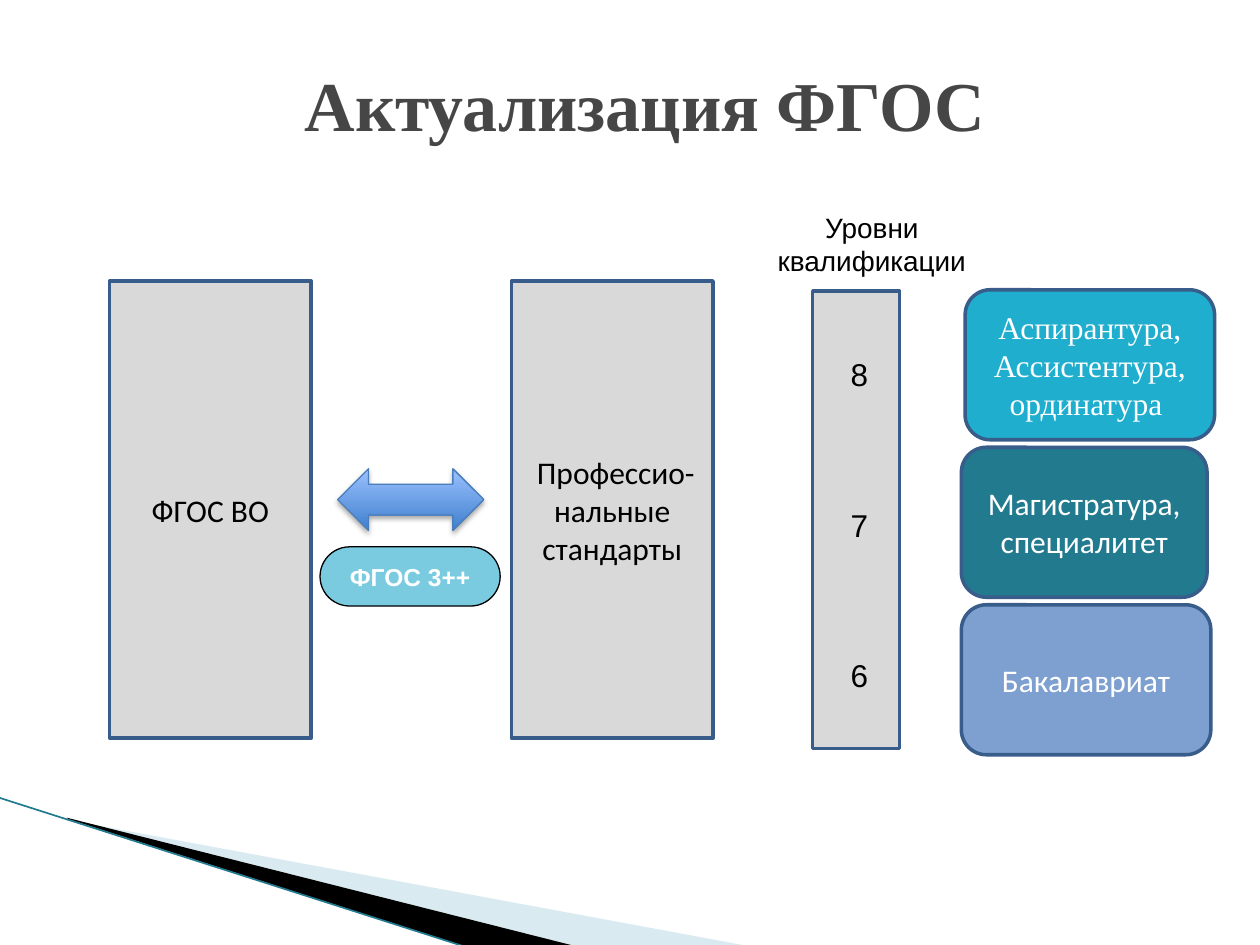
import pptx
import pptx.chart.data
import pptx.dml.color
import pptx.enum.shapes
import pptx.enum.text
import pptx.oxml
import pptx.oxml.ns
import pptx.util
from pptx.util import Inches

SHAPES = pptx.enum.shapes.MSO_SHAPE
ALIGN = pptx.enum.text.PP_ALIGN
WIDE, NARROW = (0.1, 0.05), (0.04, 0.02)
GREY, NAVY, TEAL = "D9D9D9", "385D8A", "227A8F"


def color(value):
    """Turn a hex string into a colour."""
    return pptx.dml.color.RGBColor.from_string(value)


def add_effect(parent, tag, **attributes):
    """Append a drawing element with attributes and return it."""
    element = pptx.oxml.parse_xml(f"<a:{tag} {pptx.oxml.ns.nsdecls('a')}/>")
    for name, value in attributes.items():
        element.set(name, str(value))
    parent.append(element)
    return element


def write(shape, text, font, size, ink, bold=False, inset=WIDE, wrap=True,
          align=ALIGN.CENTER, anchor=pptx.enum.text.MSO_ANCHOR.MIDDLE):
    """Put formatted text in a shape."""
    frame = shape.text_frame
    frame.text = text
    frame.word_wrap = wrap
    frame.vertical_anchor = anchor
    frame.margin_left = frame.margin_right = Inches(inset[0])
    frame.margin_top = frame.margin_bottom = Inches(inset[1])
    for para in frame.paragraphs:
        para.alignment = align
        for span in para.runs:
            span.font.name = font
            span.font.size = pptx.util.Pt(size)
            span.font.bold = bold
            span.font.color.rgb = color(ink)


def add_block(page, kind, box, fill, line=NAVY, weight=2):
    """Add a filled, outlined shape without a shadow."""
    block = page.shapes.add_shape(kind, *map(Inches, box))
    block.shadow.inherit = False
    if fill:
        block.fill.solid()
        block.fill.fore_color.rgb = color(fill)
    block.line.color.rgb = color(line)
    block.line.width = pptx.util.Pt(weight)
    return block


def add_caption(page, box, text, font, size, ink="000000", **options):
    """Add a text box anchored at the top."""
    caption = page.shapes.add_textbox(*map(Inches, box))
    write(caption, text, font, size, ink,
          anchor=pptx.enum.text.MSO_ANCHOR.TOP, **options)


def add_wedge(page, points, fill, opacity=100):
    """Add a filled polygon without an outline."""
    corners = [(Inches(x), Inches(y)) for x, y in points]
    builder = page.shapes.build_freeform(*corners[0])
    builder.add_line_segments(corners[1:])
    wedge = builder.convert_to_shape()
    wedge.shadow.inherit = False
    wedge.fill.solid()
    wedge.fill.fore_color.rgb = color(fill)
    wedge.line.fill.background()
    if opacity < 100:
        tint = wedge.fill._xPr.find(".//" + pptx.oxml.ns.qn("a:srgbClr"))
        add_effect(tint, "alpha", val=opacity * 1000)


def add_corner(page, left, top):
    """Draw the wedges and the line in the bottom corner."""
    def move(points):
        return [(left + x, top + y) for x, y in points]

    add_wedge(page, move([(0.55, 0.18), (5.95, 1.18), (4.56, 1.18), (0.55, 0.17)]),
              "A0CBDC", 40)
    add_wedge(page, move([(0.53, 0.16), (4.57, 1.18), (3.72, 1.19), (0.54, 0.17)]),
              "000000")
    ends = [Inches(v) for point in move([(-0.01, 0), (3.71, 1.19)]) for v in point]
    edge = page.shapes.add_connector(pptx.enum.shapes.MSO_CONNECTOR.STRAIGHT, *ends)
    edge.line.color.rgb = color(TEAL)
    edge.line.width = pptx.util.Pt(0.95)
    add_effect(edge._element.spPr, "effectLst")


def add_arrow(page, box):
    """Draw the shaded double arrow with its soft shadow."""
    arrow = add_block(page, SHAPES.LEFT_RIGHT_ARROW, box, None, "4A7EBB", 0.75)
    arrow.fill.gradient()
    arrow.fill.gradient_angle = 90
    for stop, shade in zip(arrow.fill.gradient_stops, ("3F80CD", "9BC1FF")):
        stop.color.rgb = color(shade)
    effects = arrow._element.spPr.find(pptx.oxml.ns.qn("a:effectLst"))
    shadow = add_effect(effects, "outerShdw", blurRad=pptx.util.Pt(3.1),
                        dist=pptx.util.Pt(1.8), dir=5400000, rotWithShape=0)
    tint = add_effect(shadow, "srgbClr", val="000000")
    add_effect(tint, "alpha", val=35000)


def add_standards(page, left, top):
    """Draw the two standards and the link between them."""
    columns = [(0, "ФГОС ВО"), (3.19, " Профессио-нальные стандарты")]
    for offset, text in columns:
        column = add_block(page, SHAPES.RECTANGLE, (left + offset, top, 1.6, 3.63), GREY)
        write(column, text, "Calibri", 18, "000000")
    add_arrow(page, (left + 1.81, top + 1.49, 1.16, 0.49))
    badge = add_block(page, SHAPES.ROUNDED_RECTANGLE,
                      (left + 1.67, top + 2.11, 1.43, 0.47), "7ACBE0", "000000", 0.75)
    badge.adjustments[0] = 0.5
    write(badge, "ФГОС 3++", "Arial", 14, "FFFFFF", bold=True, inset=NARROW)


def add_levels(page, left, top):
    """Draw the qualification scale and its heading."""
    add_block(page, SHAPES.RECTANGLE, (left, top, 0.69, 3.63), GREY)
    add_caption(page, (left - 0.53, top - 0.66, 2, 0.58), "Уровни квалификации",
                "Arial", 16, inset=NARROW)
    for index, level in enumerate("876"):
        add_caption(page, (left + 0.26, top + 0.49 + 1.195 * index, 0.22, 0.34), level,
                    "Arial", 18, inset=NARROW, wrap=False, align=ALIGN.LEFT)


def add_degrees(page, left, top):
    """Stack the degree programmes beside the scale."""
    degrees = [
        ("Аспирантура,\nАссистентура,\vординатура ", "Times New Roman", "1FAECD", 0.03, 1.98),
        ("Магистратура, специалитет", "Calibri", TEAL, 0, 1.95),
        ("Бакалавриат", "Calibri", "7DA0D0", 0, 1.98),
    ]
    for index, (text, font, fill, shift, width) in enumerate(degrees):
        box = (left + shift, top + 1.25 * index, width, 1.19)
        write(add_block(page, SHAPES.ROUNDED_RECTANGLE, box, fill), text, font, 18, "FFFFFF")


def main():
    """Build the slide and save the deck."""
    deck = pptx.Presentation()
    deck.slide_width, deck.slide_height = Inches(10), Inches(7.5)
    page = deck.slides.add_slide(deck.slide_layouts[6])
    add_corner(page, 0, 6.33)
    add_caption(page, (2.32, 0.44, 5.66, 0.77), "Актуализация ФГОС", "Times New Roman",
                40, "464646", bold=True, wrap=False, align=ALIGN.LEFT)
    add_standards(page, 0.87, 2.23)
    add_levels(page, 6.45, 2.31)
    add_degrees(page, 7.63, 2.3)
    deck.save("out.pptx")


if __name__ == "__main__":
    main()
